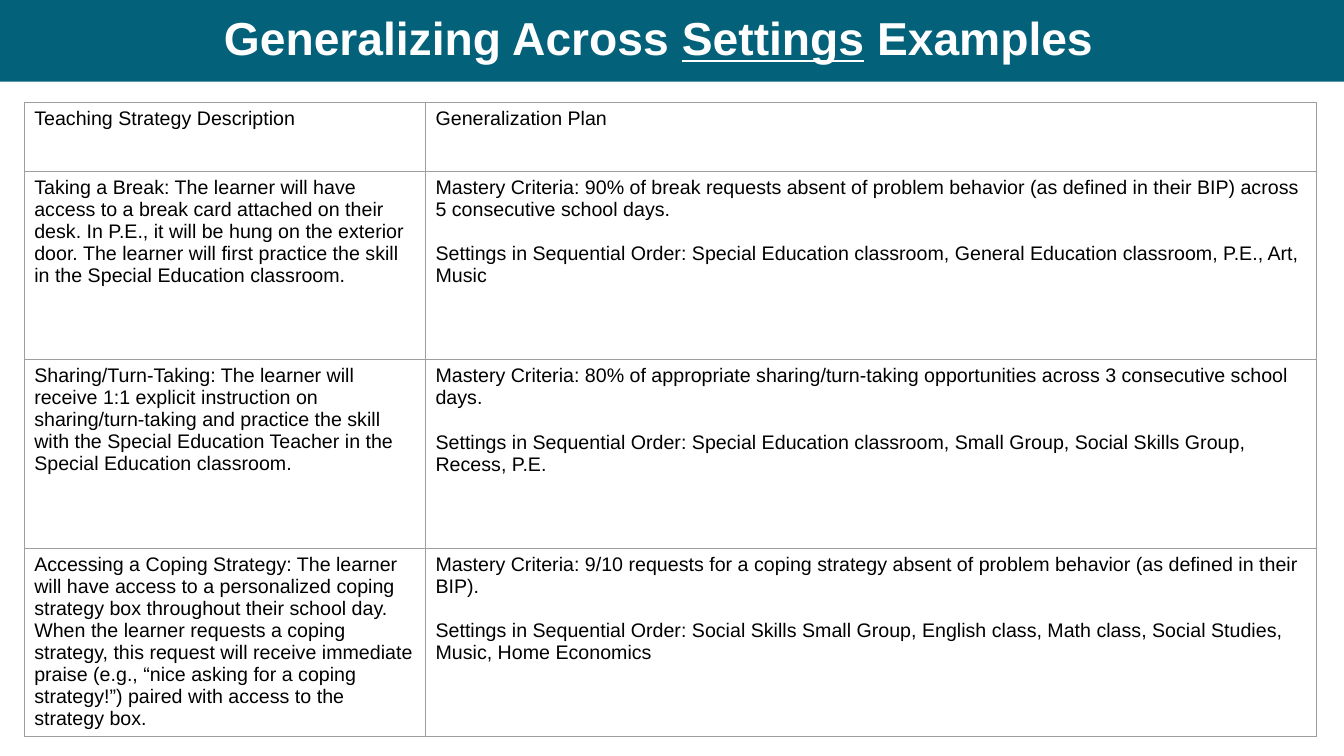
import dataclasses
import typing

import lxml.etree
import pptx
import pptx.dml.color
import pptx.enum.shapes
import pptx.enum.text
import pptx.oxml.ns
import pptx.util

Inches = pptx.util.Inches
Pt = pptx.util.Pt

COLOURS = {"banner": "03617A", "title": "FFFFFF", "text": "000000", "border": "9E9E9E"}
TITLE_FONT = {"name": "Arial", "size": Pt(33), "bold": True}
CELL_FONT = {"name": "Arial", "size": Pt(14), "bold": False}
TITLE_FRAME = {
    "margin_left": Inches(0.1),
    "margin_right": Inches(0.1),
    "margin_top": Inches(0.05),
    "margin_bottom": Inches(0.05),
    "vertical_anchor": pptx.enum.text.MSO_ANCHOR.MIDDLE,
    "auto_size": pptx.enum.text.MSO_AUTO_SIZE.NONE,
    "word_wrap": True,
}
TITLE_PARAGRAPH = {"alignment": pptx.enum.text.PP_ALIGN.CENTER, "line_spacing": 0.9}
TITLE_BOX = {"left": Inches(0.37), "top": Inches(0), "width": Inches(12.32), "height": Inches(0.81)}
TABLE_OPTIONS = {"first_row": False, "horz_banding": False}
COLUMN_WIDTHS = (3.98, 8.84)
HEADER_HEIGHT = 0.68
EXAMPLE_HEIGHT = 1.87
PARAGRAPH_GAP = Pt(16)


@dataclasses.dataclass(frozen=True)
class Example:
    strategy: str
    mastery: str
    settings: str

    def cell_texts(self) -> list[list[str]]:
        return [
            [self.strategy],
            [
                f"Mastery Criteria: {self.mastery}",
                f"Settings in Sequential Order: {self.settings}",
            ],
        ]


EXAMPLES = (
    Example(
        "Taking a Break: The learner will have access to a break card attached on their desk. "
        "In P.E., it will be hung on the exterior door. The learner will first practice the "
        "skill in the Special Education classroom.",
        "90% of break requests absent of problem behavior (as defined in their BIP) across "
        "5 consecutive school days.",
        "Special Education classroom, General Education classroom, P.E., Art, Music",
    ),
    Example(
        "Sharing/Turn-Taking: The learner will receive 1:1 explicit instruction on "
        "sharing/turn-taking and practice the skill with the Special Education Teacher in the "
        "Special Education classroom.",
        "80% of appropriate sharing/turn-taking opportunities across 3 consecutive school days.",
        "Special Education classroom, Small Group, Social Skills Group, Recess, P.E.",
    ),
    Example(
        "Accessing a Coping Strategy: The learner will have access to a personalized coping "
        "strategy box throughout their school day. When the learner requests a coping strategy, "
        "this request will receive immediate praise (e.g., “nice asking for a coping strategy!”) "
        "paired with access to the strategy box.",
        "9/10 requests for a coping strategy absent of problem behavior (as defined in their BIP).",
        "Social Skills Small Group, English class, Math class, Social Studies, Music, "
        "Home Economics",
    ),
)


def apply_format(target: typing.Any, values: dict[str, typing.Any]) -> None:
    for name, value in values.items():
        setattr(target, name, value)


def colour(name: str) -> pptx.dml.color.RGBColor:
    return pptx.dml.color.RGBColor.from_string(COLOURS[name])


def add_run(paragraph: typing.Any, text: str, font: dict[str, typing.Any], colour_name: str) -> None:
    run = paragraph.add_run()
    run.text = text
    apply_format(run.font, font)
    run.font.color.rgb = colour(colour_name)


def add_heading(slide: typing.Any, banner_width: int) -> None:
    title = slide.shapes.title
    apply_format(title, TITLE_BOX)
    apply_format(title.text_frame, TITLE_FRAME)
    paragraph = title.text_frame.paragraphs[0]
    apply_format(paragraph, TITLE_PARAGRAPH)
    for text, underline in (("Generalizing Across ", False), ("Settings", True), (" Examples", False)):
        add_run(paragraph, text, {**TITLE_FONT, "underline": underline}, "title")

    # Banner, placed behind the title
    banner = slide.shapes.add_shape(
        pptx.enum.shapes.MSO_SHAPE.RECTANGLE, 0, 0, banner_width, Inches(0.81)
    )
    banner.shadow.inherit = False
    banner.fill.solid()
    banner.fill.fore_color.rgb = colour("banner")
    banner.line.fill.background()
    title.element.addprevious(banner.element)


def add_borders(cell: typing.Any) -> None:
    qualified = pptx.oxml.ns.qn
    properties = cell._tc.get_or_add_tcPr()
    for position, side in enumerate(("a:lnL", "a:lnR", "a:lnT", "a:lnB")):
        line = lxml.etree.Element(qualified(side), w=str(int(Pt(0.75))))
        fill = lxml.etree.SubElement(line, qualified("a:solidFill"))
        lxml.etree.SubElement(fill, qualified("a:srgbClr"), val=COLOURS["border"])
        properties.insert(position, line)


def fill_cell(cell: typing.Any, texts: list[str]) -> None:
    cell.fill.background()
    add_borders(cell)
    for index, text in enumerate(texts):
        paragraph = cell.text_frame.add_paragraph() if index else cell.text_frame.paragraphs[0]
        if index:
            paragraph.space_before = PARAGRAPH_GAP
        add_run(paragraph, text, CELL_FONT, "text")


def add_examples_table(slide: typing.Any) -> None:
    rows = [[["Teaching Strategy Description"], ["Generalization Plan"]]]
    rows += [example.cell_texts() for example in EXAMPLES]
    heights = [HEADER_HEIGHT] + [EXAMPLE_HEIGHT] * len(EXAMPLES)
    table = slide.shapes.add_table(
        len(rows), len(COLUMN_WIDTHS), Inches(0.24), Inches(1.02),
        Inches(sum(COLUMN_WIDTHS)), Inches(sum(heights)),
    ).table
    apply_format(table, TABLE_OPTIONS)
    for column, width in zip(table.columns, COLUMN_WIDTHS):
        column.width = Inches(width)
    for row, height, row_texts in zip(table.rows, heights, rows):
        row.height = Inches(height)
        for cell, texts in zip(row.cells, row_texts):
            fill_cell(cell, texts)


def main() -> None:
    presentation = pptx.Presentation()
    apply_format(presentation, {"slide_width": Inches(13.33), "slide_height": Inches(7.5)})
    slide = presentation.slides.add_slide(presentation.slide_layouts.get_by_name("Title Only"))
    add_heading(slide, presentation.slide_width)
    add_examples_table(slide)
    presentation.save("out.pptx")


if __name__ == "__main__":
    main()
